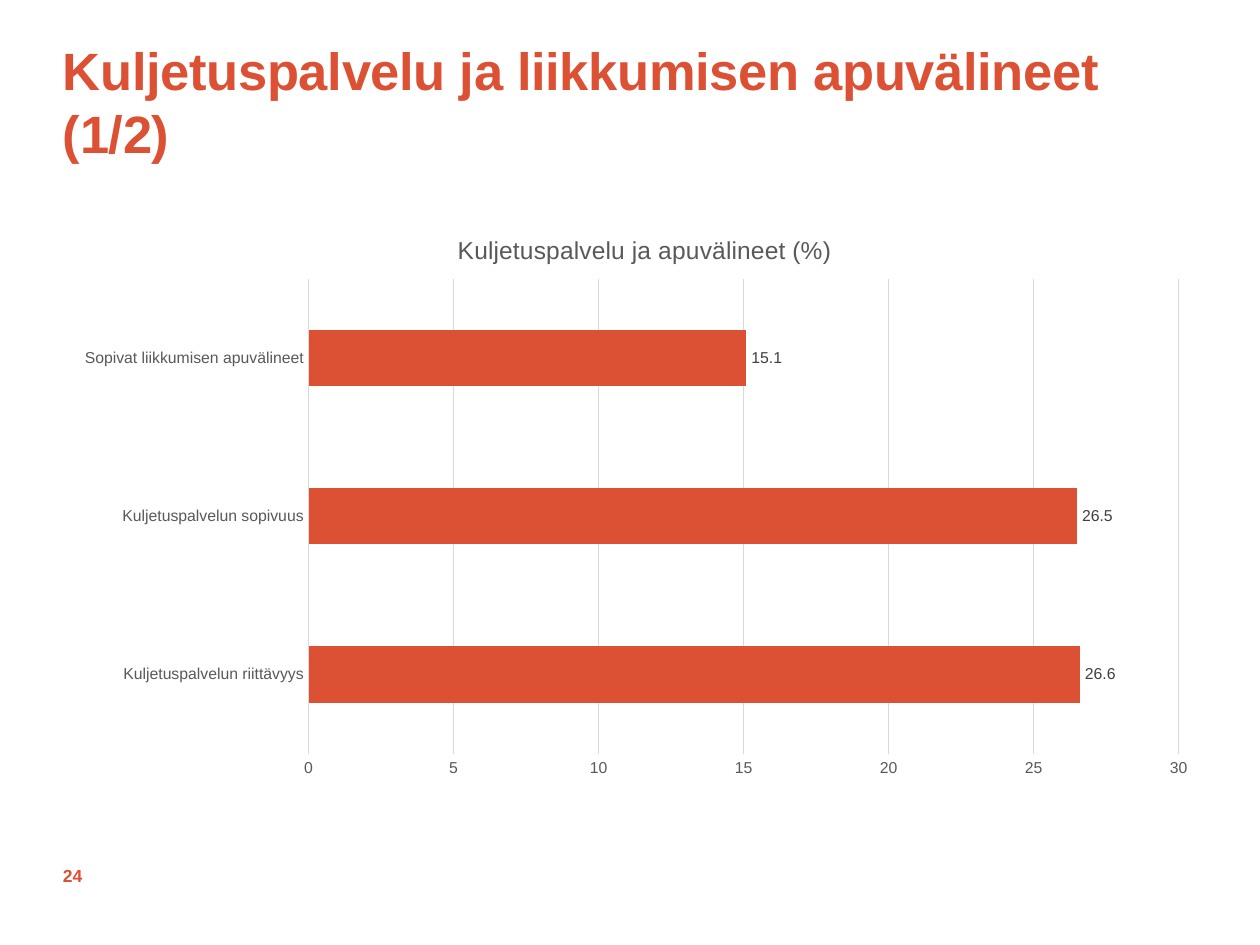
"""Build the slide on transport service and mobility aids with its bar chart."""
from pptx import Presentation
from pptx.chart.data import CategoryChartData
from pptx.dml.color import RGBColor
from pptx.enum.chart import XL_CHART_TYPE, XL_LABEL_POSITION, XL_TICK_MARK
from pptx.enum.text import MSO_ANCHOR
from pptx.oxml import parse_xml
from pptx.oxml.ns import nsdecls, qn
from pptx.util import Cm, Pt

ORANGE, GREY, DARK_GREY, LIGHT_GREY = "DC5034", "595959", "404040", "D9D9D9"


def style_font(font, size, color, bold=False):
    font.name = "Arial"
    font.size = Pt(size)
    font.bold = bold
    font.color.rgb = RGBColor.from_string(color)


def place(element, index, **settings):
    for layout in element.findall(qn("c:layout")):
        element.remove(layout)
    children = "".join(f'<c:{name} val="{value}"/>' for name, value in settings.items())
    element.insert(index, parse_xml(
        f'<c:layout {nsdecls("c")}><c:manualLayout>{children}</c:manualLayout></c:layout>'))


presentation = Presentation()
presentation.slide_width, presentation.slide_height = Cm(25.4), Cm(19.05)
slide = presentation.slides.add_slide(presentation.slide_layouts[6])

texts = [
    ("Kuljetuspalvelu ja liikkumisen apuvälineet (1/2)", 0.76, 22.86, 2.95, 30, MSO_ANCHOR.TOP),
    ("24", 17.15, 1.8, 1.02, 10, MSO_ANCHOR.MIDDLE),
]
for text, top, width, height, size, anchor in texts:
    shape = slide.shapes.add_textbox(Cm(1.27), Cm(top), Cm(width), Cm(height))
    frame = shape.text_frame
    frame.word_wrap = True
    frame.vertical_anchor = anchor
    frame.margin_left = frame.margin_right = frame.margin_top = frame.margin_bottom = 0
    paragraph = frame.paragraphs[0]
    paragraph.text = text
    style_font(paragraph.font, size, ORANGE, bold=True)
    if size == 30:
        paragraph.line_spacing = Pt(36)
        paragraph.runs[0].font._element.set("spc", "-20")

chart_data = CategoryChartData()
chart_data.categories = [
    "Kuljetuspalvelun riittävyys",
    "Kuljetuspalvelun sopivuus",
    "Sopivat liikkumisen apuvälineet",
]
chart_data.add_series("Series 1", [26.6, 26.5, 15.1])
chart = slide.shapes.add_chart(
    XL_CHART_TYPE.BAR_CLUSTERED, Cm(1.27), Cm(4.17), Cm(23.14), Cm(11.73), chart_data).chart
style_font(chart.font, 10, "000000")
chart.has_legend = False
chart.has_title = True
title_paragraph = chart.chart_title.text_frame.paragraphs[0]
title_paragraph.text = "Kuljetuspalvelu ja apuvälineet (%)"
style_font(title_paragraph.font, 14, GREY)
place(chart.chart_title._element, 1, xMode="edge", yMode="edge", x=0.34, y=0.04)
place(chart._chartSpace.chart.plotArea, 0, layoutTarget="inner", xMode="edge", yMode="edge",
      x=0.214, y=0.124, w=0.758, h=0.816)

for axis in (chart.category_axis, chart.value_axis):
    axis.major_tick_mark = axis.minor_tick_mark = XL_TICK_MARK.NONE
    style_font(axis.tick_labels.font, 9, GREY)
chart.value_axis.minimum_scale = 0
chart.value_axis.maximum_scale = 30
chart.value_axis.major_unit = 5
chart.value_axis.format.line.fill.background()
chart.value_axis.has_major_gridlines = True
chart.category_axis.has_major_gridlines = False
for line in (chart.category_axis.format.line, chart.value_axis.major_gridlines.format.line):
    line.width = Pt(0.75)
    line.color.rgb = RGBColor.from_string(LIGHT_GREY)

plot = chart.plots[0]
plot.gap_width = 182
plot.vary_by_categories = False
series = plot.series[0]
series.format.fill.solid()
series.format.fill.fore_color.rgb = RGBColor.from_string(ORANGE)
labels = series.data_labels
labels.show_value = True
labels.position = XL_LABEL_POSITION.OUTSIDE_END
style_font(labels.font, 9, DARK_GREY)

presentation.save("out.pptx")
